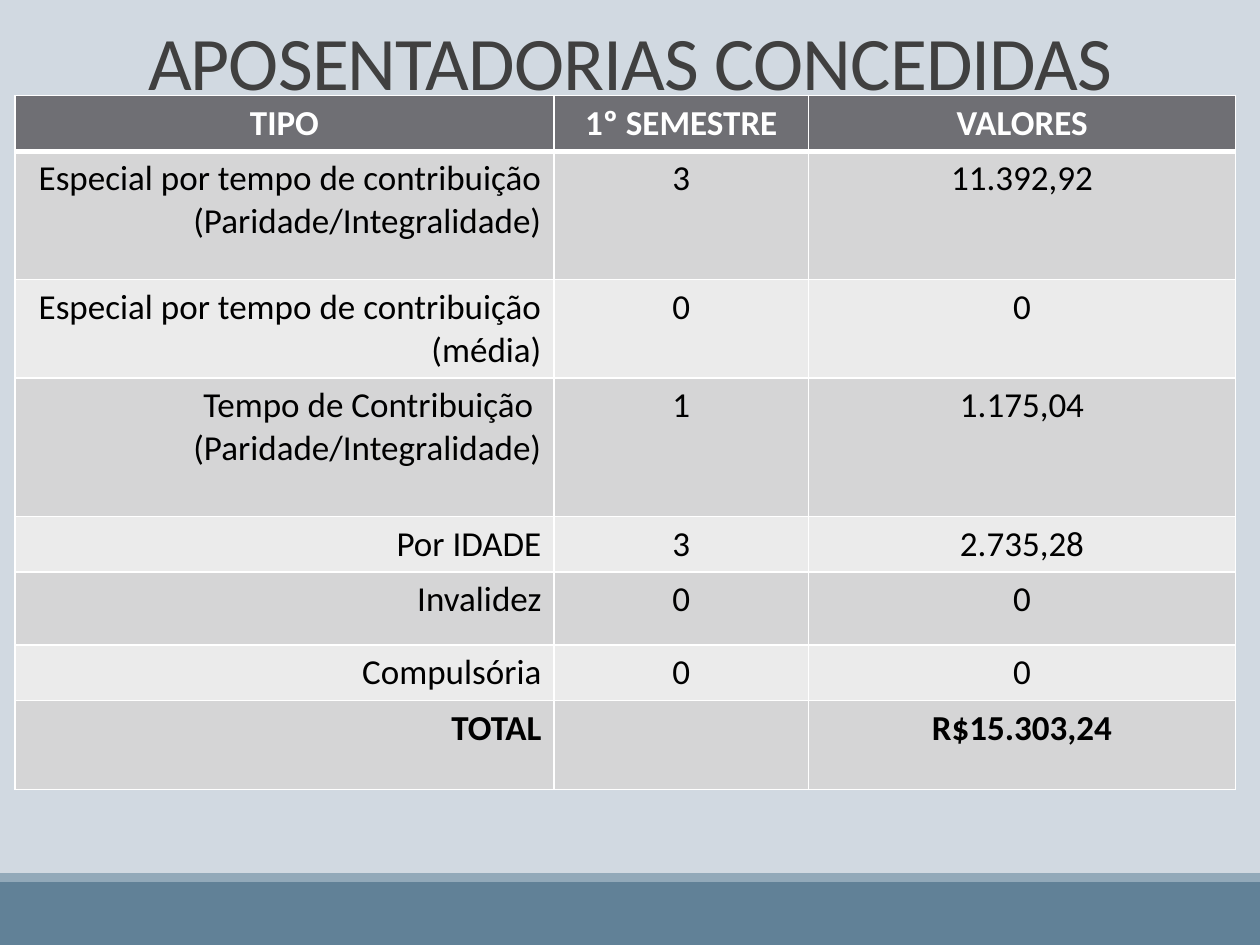
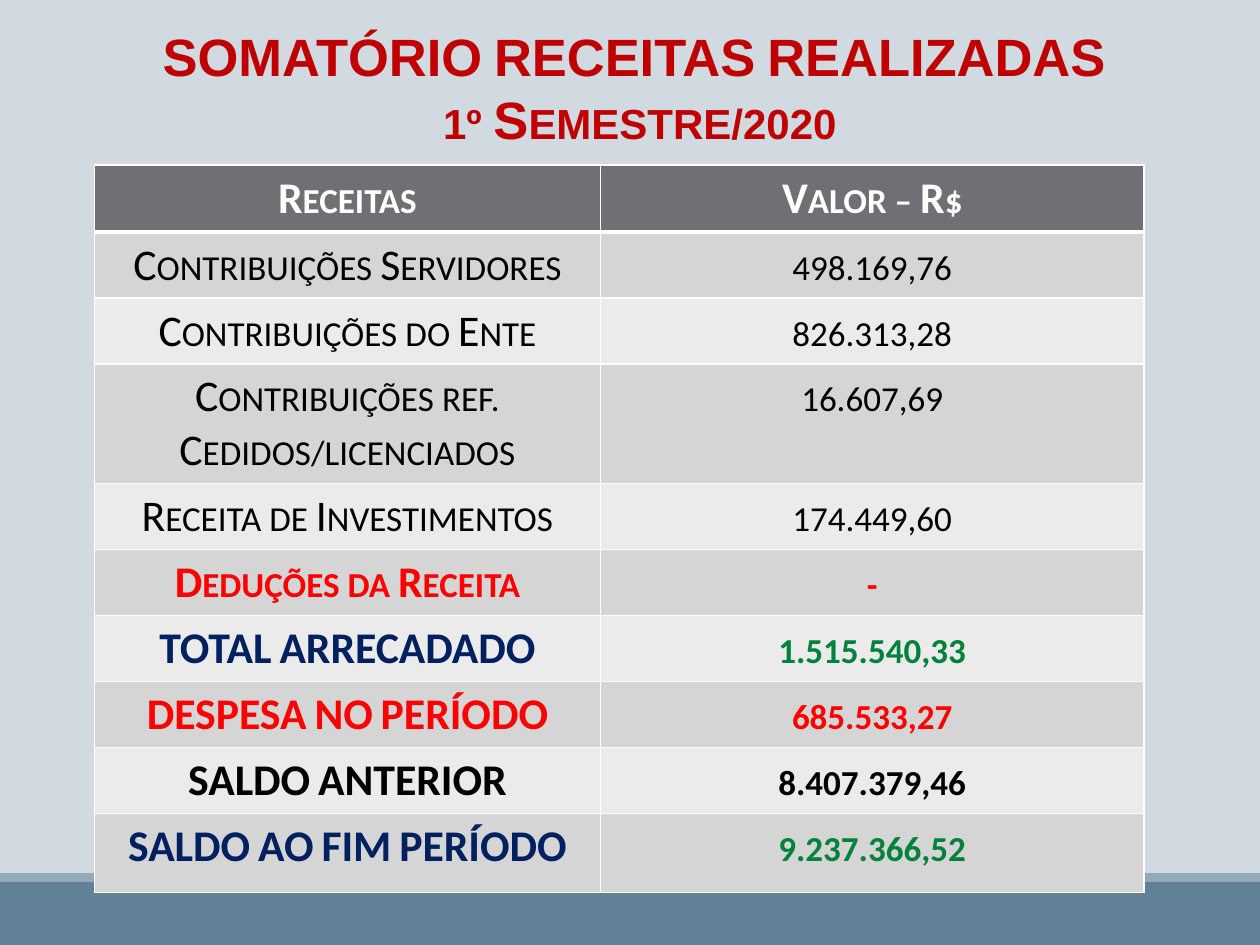
from dataclasses import dataclass
from lxml import etree
from pptx import Presentation
from pptx.dml.color import RGBColor
from pptx.enum import shapes, text
from pptx.oxml.ns import qn
from pptx.util import Cm, Pt

# Palette
BACKGROUND = RGBColor(0xD1, 0xD9, 0xE1)
BAND_DARK = RGBColor(0x61, 0x81, 0x97)
BAND_LIGHT = RGBColor(0x92, 0xA9, 0xB9)
HEADER_FILL = RGBColor(0x6F, 0x6F, 0x74)
ROW_FILLS = (RGBColor(0xEB, 0xEB, 0xEB), RGBColor(0xD5, 0xD5, 0xD6))
WHITE = RGBColor(0xFF, 0xFF, 0xFF)
BLACK = RGBColor(0, 0, 0)
GREY = RGBColor(0x40, 0x40, 0x40)
CRIMSON = RGBColor(0xC0, 0, 0)
RED = RGBColor(0xFF, 0, 0)
NAVY = RGBColor(0, 0x20, 0x60)
GREEN = RGBColor(0, 0x82, 0x3B)

CENTER, RIGHT = text.PP_ALIGN.CENTER, text.PP_ALIGN.RIGHT


@dataclass
class Band:
    top: float
    height: float
    color: RGBColor


@dataclass
class Title:
    lines: list[str]
    box: tuple[float, float, float, float]
    font: dict
    xml: dict
    anchor: text.MSO_ANCHOR
    line_spacing: float = 1.0


@dataclass
class Row:
    height: float
    cells: tuple[str, ...]
    bold: bool = False
    colors: tuple[RGBColor, ...] = (BLACK,)


@dataclass
class Table:
    left: float
    top: float
    widths: tuple[float, ...]
    rows: list[Row]
    size: float
    xml: dict
    label_align: text.PP_ALIGN = CENTER


BANDS = [Band(17.78, 1.27, BAND_DARK), Band(17.6, 0.18, BAND_LIGHT)]
SMALL_CAPS = {"cap": "small"}

RETIREMENTS_TITLE = Title(
    ["APOSENTADORIAS CONCEDIDAS"], (0, 0.33, 25.4, 1.93),
    {"name": "Calibri", "size": Pt(43.2), "bold": False}, {"spc": "-50"},
    text.MSO_ANCHOR.BOTTOM, 0.85)
RETIREMENTS = Table(0.3, 1.93, (10.87, 5.13, 8.61), [
    Row(1.09, ("TIPO", "1º SEMESTRE", "VALORES"), True, (WHITE,)),
    Row(2.59, ("Especial por tempo de contribuição\v(Paridade/Integralidade)", "3", "11.392,92")),
    Row(1.96, ("Especial por tempo de contribuição (média)", "0", "0")),
    Row(2.79, ("Tempo de Contribuição \v(Paridade/Integralidade)", "1", "1.175,04")),
    Row(1.09, ("Por IDADE", "3", "2.735,28")),
    Row(1.47, ("Invalidez", "0", "0")),
    Row(1.09, ("Compulsória", "0", "0")),
    Row(1.8, ("TOTAL", "", "R$15.303,24"), True),
], 20, {}, RIGHT)

REVENUE_TITLE = Title(
    ["SOMATÓRIO RECEITAS REALIZADAS ", "1º Semestre/2020"], (1.85, 0.36, 22.1, 2.82),
    {"name": "Arial", "size": Pt(30), "bold": True}, SMALL_CAPS,
    text.MSO_ANCHOR.TOP)
REVENUE = Table(1.9, 3.33, (10.21, 10.95), [
    Row(1.35, ("Receitas", "Valor – R$"), True, (WHITE,)),
    Row(1.22, ("Contribuições Servidores", "498.169,76")),
    Row(1.22, ("Contribuições do Ente", "826.313,28")),
    Row(2.21, ("Contribuições ref. Cedidos/licenciados", "16.607,69")),
    Row(1.32, ("Receita de Investimentos", "174.449,60")),
    Row(1.22, ("Deduções da Receita", "-"), True, (RED,)),
    Row(1.22, ("TOTAL ARRECADADO", "1.515.540,33"), True, (NAVY, GREEN)),
    Row(1.22, ("DESPESA NO PERÍODO", "685.533,27"), True, (RED,)),
    Row(1.22, ("SALDO ANTERIOR", "8.407.379,46"), True),
    Row(1.6, ("SALDO AO FIM PERÍODO", "9.237.366,52"), True, (NAVY, GREEN)),
], 25, SMALL_CAPS)


def format_paragraph(p, font: dict, color: RGBColor, xml: dict) -> None:
    for r in p.runs:
        for name, value in font.items():
            setattr(r.font, name, value)
        r.font.color.rgb = color
        for name, value in xml.items():
            r._r.get_or_add_rPr().set(name, value)


def add_master_bands(prs, slide) -> None:
    """Draw the bottom bands and move them to the master, behind everything."""
    tree = prs.slide_master.shapes._spTree
    for i, band in enumerate(BANDS):
        sp = slide.shapes.add_shape(shapes.MSO_SHAPE.RECTANGLE, 0, Cm(band.top),
                                    prs.slide_width, Cm(band.height))
        sp.shadow.inherit = False
        sp.fill.solid()
        sp.fill.fore_color.rgb = band.color
        sp.line.fill.background()
        sp._element.nvSpPr.cNvPr.set("id", str(100 + i))
        tree.insert(2 + i, sp._element)


def set_title(slide, title: Title, color: RGBColor) -> None:
    sp = slide.shapes.title
    sp.left, sp.top, sp.width, sp.height = map(Cm, title.box)
    tf = sp.text_frame
    tf.text = "\n".join(title.lines)
    tf.word_wrap = True
    tf.auto_size = text.MSO_AUTO_SIZE.NONE
    tf.vertical_anchor = title.anchor
    for p in tf.paragraphs:
        p.alignment = CENTER
        p.line_spacing = title.line_spacing
        format_paragraph(p, title.font, color, title.xml)


def set_borders(cell, top: float, bottom: float) -> None:
    tc_pr = cell._tc.get_or_add_tcPr()
    sides = {"lnL": 1, "lnR": 1, "lnT": top, "lnB": bottom}
    for i, (side, width) in enumerate(sides.items()):
        ln = etree.Element(qn(f"a:{side}"), w=str(Pt(width)))
        fill = etree.SubElement(ln, qn("a:solidFill"))
        etree.SubElement(fill, qn("a:srgbClr"), val=str(WHITE))
        tc_pr.insert(i, ln)


def add_table(slide, spec_table: Table) -> None:
    t = spec_table
    frame = slide.shapes.add_table(
        len(t.rows), len(t.widths), Cm(t.left), Cm(t.top),
        Cm(sum(t.widths)), Cm(sum(row.height for row in t.rows)))
    table = frame.table
    table.horz_banding = False
    for column, width in zip(table.columns, t.widths):
        column.width = Cm(width)
    for i, row in enumerate(t.rows):
        table.rows[i].height = Cm(row.height)
        font = {"name": "Calibri", "size": Pt(t.size), "bold": row.bold}
        for j, words in enumerate(row.cells):
            cell = table.cell(i, j)
            cell.fill.solid()
            cell.fill.fore_color.rgb = ROW_FILLS[i % 2] if i else HEADER_FILL
            set_borders(cell, top=3 if i == 1 else 1, bottom=1 if i else 3)
            p = cell.text_frame.paragraphs[0]
            p.text = words
            p.alignment = t.label_align if i and j == 0 else CENTER
            format_paragraph(p, font, row.colors[j % len(row.colors)], t.xml)


def main() -> None:
    prs = Presentation()
    prs.slide_width, prs.slide_height = Cm(25.4), Cm(19.05)
    background = prs.slide_master.background.fill
    background.solid()
    background.fore_color.rgb = BACKGROUND
    title_only = prs.slide_layouts[5]

    # Retirements granted
    slide = prs.slides.add_slide(title_only)
    add_master_bands(prs, slide)
    set_title(slide, RETIREMENTS_TITLE, GREY)
    add_table(slide, RETIREMENTS)

    # Revenue summary
    slide = prs.slides.add_slide(title_only)
    set_title(slide, REVENUE_TITLE, CRIMSON)
    add_table(slide, REVENUE)

    prs.save("out.pptx")


if __name__ == "__main__":
    main()
